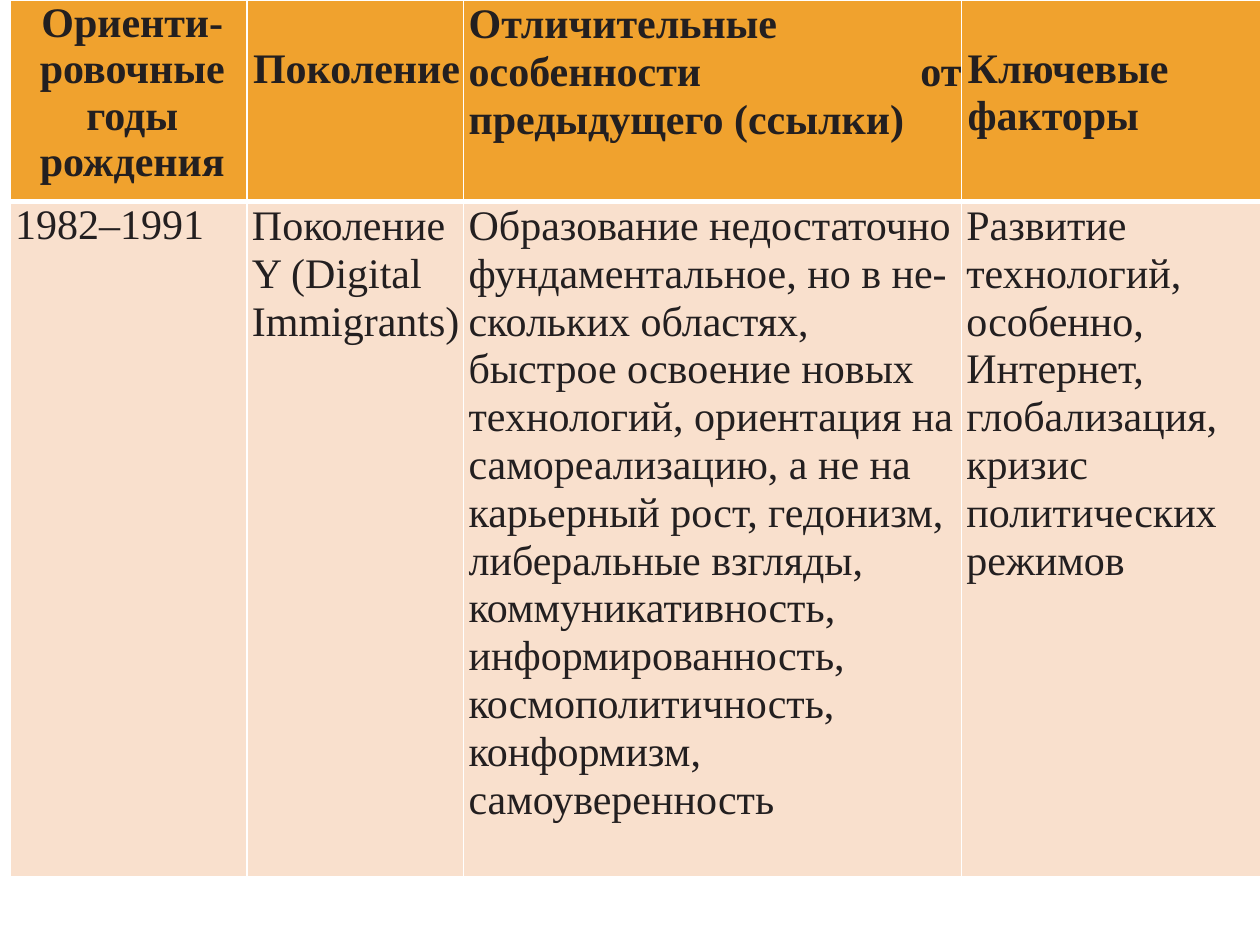
"""Build a one-slide table describing a generation and its key factors."""
from dataclasses import dataclass

from lxml.etree import SubElement
from pptx import Presentation
from pptx.dml.color import RGBColor
from pptx.enum.text import PP_ALIGN
from pptx.oxml.ns import qn
from pptx.util import Inches, Pt


@dataclass(frozen=True)
class Theme:
    """Colours, font, type size and line weights."""
    header: str = "F0A22E"
    body: str = "F9E0CD"
    ink: str = "231F20"
    rule: str = "FFFFFF"
    font: str = "Times New Roman"
    size: float = 24
    thin: float = 1
    thick: float = 3


class SlideBuilder:
    """Holds the theme and the current slide."""

    def __init__(self, deck, theme):
        """Add a blank page to the deck."""
        self.theme = theme
        self.page = deck.slides.add_slide(deck.slide_layouts[6])

    def table(self, left, top, widths, heights, rows):
        """Add a table and fill its cells."""
        frame = self.page.shapes.add_table(
            len(heights), len(widths), Inches(left), Inches(top),
            Inches(sum(widths)), Inches(sum(heights)))
        table = frame.table
        table.first_row = table.horz_banding = False
        for column, width in zip(table.columns, widths):
            column.width = Inches(width)
        for row, height in zip(table.rows, heights):
            row.height = Inches(height)
        for row_index, row in enumerate(rows):
            for column_index, content in enumerate(row):
                self.cell(table.cell(row_index, column_index), row_index == 0, **content)

    def cell(self, cell, is_header, text, left=0.04, top=0, align=PP_ALIGN.LEFT, spacing=1.03):
        """Write and style one table cell."""
        theme = self.theme
        margins = {"margin_left": left, "margin_top": top, "margin_right": 0, "margin_bottom": 0}
        for name, value in margins.items():
            setattr(cell, name, Inches(value))
        self.borders(cell, is_header)
        cell.fill.solid()
        cell.fill.fore_color.rgb = RGBColor.from_string(theme.header if is_header else theme.body)
        para = cell.text_frame.paragraphs[0]
        layout = {"alignment": align, "line_spacing": spacing, "space_before": Pt(0.4)}
        for name, value in layout.items():
            setattr(para, name, value)
        span = para.add_run()
        span.text = text
        style = {"name": theme.font, "size": Pt(theme.size), "bold": is_header}
        for name, value in style.items():
            setattr(span.font, name, value)
        span.font.color.rgb = RGBColor.from_string(theme.ink)

    def borders(self, cell, is_header):
        """Draw the cell edges, with a thick rule under the header."""
        theme = self.theme
        thick_edge = "lnB" if is_header else "lnT"
        properties = cell._tc.get_or_add_tcPr()
        for edge in ("lnL", "lnR", "lnT", "lnB"):
            weight = theme.thick if edge == thick_edge else theme.thin
            line = SubElement(properties, qn(f"a:{edge}"), w=str(Pt(weight)))
            fill = SubElement(line, qn("a:solidFill"))
            SubElement(fill, qn("a:srgbClr"), val=theme.rule)


def main():
    """Assemble and save the deck."""
    deck = Presentation()
    deck.slide_width, deck.slide_height = Inches(10), Inches(7.5)
    headings = [
        {"text": "Ориенти- ровочные годы рождения", "left": 0.06,
         "align": PP_ALIGN.CENTER, "spacing": 1.0},
        {"text": "Поколение", "left": 0.02, "top": 0.37,
         "align": PP_ALIGN.CENTER, "spacing": 1.0},
        {"text": "Отличительные особенности от предыдущего (ссылки)",
         "align": PP_ALIGN.JUSTIFY},
        {"text": "Ключевые факторы", "left": 0.05, "top": 0.37, "spacing": 1.0},
    ]
    generation = [
        {"text": "1982–1991", "spacing": 1.0},
        {"text": "Поколение Y (Digital Immigrants)"},
        {"text": "Образование недостаточно фундаментальное, но в не- скольких областях, "
                 "быстрое освоение новых технологий, ориентация на самореализацию, "
                 "а не на карьерный рост, гедонизм, либеральные взгляды, "
                 "коммуникативность, информированность, космополитичность, "
                 "конформизм, самоуверенность"},
        {"text": "Развитие технологий, особенно, Интернет, глобализация, "
                 "кризис политических режимов"},
    ]
    builder = SlideBuilder(deck, Theme())
    builder.table(0.08, 0, [1.88, 1.72, 3.95, 2.38], [1.6, 5.36], [headings, generation])
    deck.save("out.pptx")


if __name__ == "__main__":
    main()
